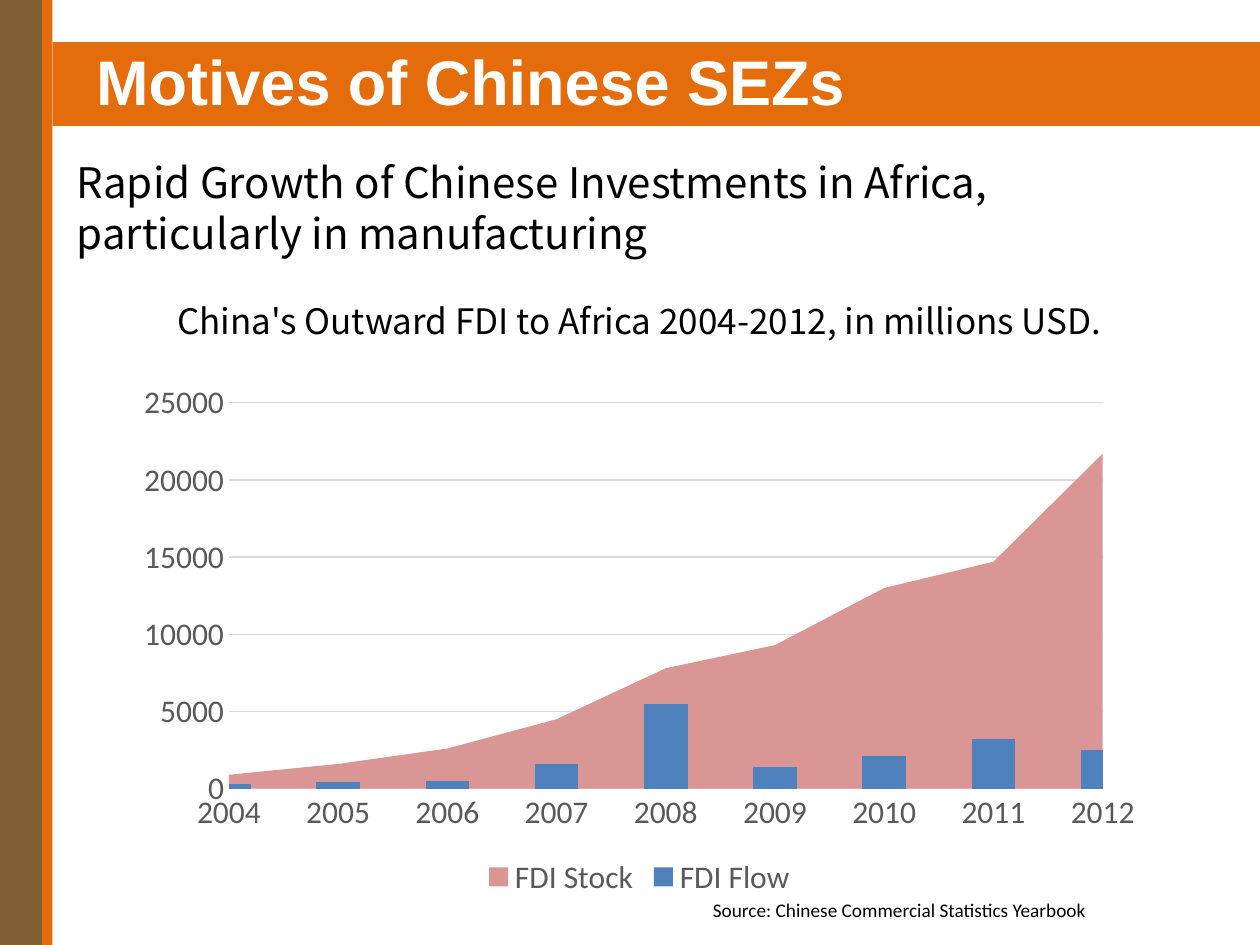
"""Build a slide on the growth of Chinese investment in Africa."""
from lxml import etree
from pptx import Presentation
from pptx.chart.data import CategoryChartData
from pptx.dml.color import RGBColor
from pptx.enum.chart import XL_CHART_TYPE, XL_LEGEND_POSITION, XL_TICK_MARK
from pptx.enum.shapes import MSO_SHAPE
from pptx.oxml.ns import qn
from pptx.util import Cm, Pt

RECTANGLE = MSO_SHAPE.RECTANGLE
CLUSTERED = XL_CHART_TYPE.COLUMN_CLUSTERED
BOTTOM = XL_LEGEND_POSITION.BOTTOM
NO_TICK = XL_TICK_MARK.NONE

WHITE = RGBColor(0xFF, 0xFF, 0xFF)
BLACK = RGBColor(0x00, 0x00, 0x00)
ORANGE = RGBColor(0xE4, 0x6C, 0x0A)
BROWN = RGBColor(0x80, 0x5F, 0x32)
GRAY = RGBColor(0x59, 0x59, 0x59)
LIGHT_GRAY = RGBColor(0xD9, 0xD9, 0xD9)
PINK = RGBColor(0xD9, 0x96, 0x94)
BLUE = RGBColor(0x4F, 0x81, 0xBD)

CJK_FONT = "Noto Sans CJK SC"
BANDS = [
    ((1.06, 0.85, 24.34, 1.69), ORANGE),
    ((0, 0, 0.85, 19.05), BROWN),
    ((0.85, 0, 0.21, 19.05), ORANGE),
]
TITLE = (
    "Motives of Chinese SEZs", (1.69, 0.74, 17.36, 1.8), None,
    {"name": "Arial", "size": Pt(36), "bold": True, "color": WHITE},
)
TEXTS = [
    ("Rapid Growth of Chinese Investments in Africa, particularly in manufacturing",
     (1.3, 3.02, 22.8, 2.31), Pt(29), {"name": CJK_FONT, "size": Pt(24), "color": BLACK}),
    ("China's Outward FDI to Africa 2004-2012, in millions USD.",
     (3.32, 5.92, 20.58, 1.12), Pt(24), {"name": CJK_FONT, "size": Pt(20), "color": BLACK}),
    ("Source: Chinese Commercial Statistics Yearbook",
     (14.12, 17.98, 8.94, 1.07), None, {"name": "Calibri", "size": Pt(11), "color": BLACK}),
]
CHART_BOX = (2.49, 7.52, 20.8, 10.67)
CHART_FONT = {"name": "Calibri", "size": Pt(18), "color": GRAY}
YEARS = [str(year) for year in range(2004, 2013)]
SERIES = [
    ("FDI Stock", (900, 1600, 2600, 4500, 7800, 9300, 13000, 14700, 21700), PINK),
    ("FDI Flow", (300, 400, 500, 1600, 5500, 1400, 2100, 3200, 2500), BLUE),
]


def lengths(box):
    return [Cm(value) for value in box]


def format_font(font, values):
    for name, value in values.items():
        if name == "color":
            font.color.rgb = value
        else:
            setattr(font, name, value)


def add_band(shapes, box, color):
    band = shapes.add_shape(RECTANGLE, *lengths(box))
    band.shadow.inherit = False
    band.fill.solid()
    band.fill.fore_color.rgb = color
    band.line.fill.background()


def add_text(shapes, text, box, line_spacing, font_values):
    frame = shapes.add_textbox(*lengths(box)).text_frame
    frame.word_wrap = True
    paragraph = frame.paragraphs[0]
    paragraph.line_spacing = line_spacing
    run = paragraph.add_run()
    run.text = text
    format_font(run.font, font_values)


def move_to_area(chart, series):
    """Move one column series to an area plot behind the columns."""
    bar_plot = chart.plots[0]._element
    area_plot = etree.Element(qn("c:areaChart"))
    etree.SubElement(area_plot, qn("c:grouping")).set("val", "stacked")
    etree.SubElement(area_plot, qn("c:varyColors")).set("val", "0")
    element = series._element
    for flag in element.findall(qn("c:invertIfNegative")):
        element.remove(flag)
    area_plot.append(element)
    for axis in bar_plot.findall(qn("c:axId")):
        etree.SubElement(area_plot, qn("c:axId")).set("val", axis.get("val"))
    bar_plot.addprevious(area_plot)


def add_investment_chart(shapes):
    data = CategoryChartData()
    data.categories = YEARS
    for name, values, _ in SERIES:
        data.add_series(name, values)
    chart = shapes.add_chart(CLUSTERED, *lengths(CHART_BOX), data).chart
    chart.has_title = False
    format_font(chart.font, CHART_FONT)
    chart.has_legend = True
    chart.legend.position = BOTTOM
    chart.legend.include_in_layout = False
    format_font(chart.legend.font, CHART_FONT)
    for axis in (chart.category_axis, chart.value_axis):
        axis.major_tick_mark = axis.minor_tick_mark = NO_TICK
        format_font(axis.tick_labels.font, CHART_FONT)
    chart.value_axis.format.line.fill.background()
    chart.value_axis.maximum_scale = 25000
    chart.value_axis.major_unit = 5000
    for line in (chart.category_axis.format.line, chart.value_axis.major_gridlines.format.line):
        line.color.rgb = LIGHT_GRAY
        line.width = Pt(0.75)
    plot = chart.plots[0]
    plot.vary_by_categories = False
    plot.gap_width = 150
    all_series = list(plot.series)
    for series, (_, _, color) in zip(all_series, SERIES):
        series.format.fill.solid()
        series.format.fill.fore_color.rgb = color
    move_to_area(chart, all_series[0])


def main():
    presentation = Presentation()
    presentation.slide_width, presentation.slide_height = Cm(25.4), Cm(19.05)
    slide = presentation.slides.add_slide(presentation.slide_layouts[6])
    header = slide.shapes.add_group_shape()
    for box, color in BANDS:
        add_band(header.shapes, box, color)
    add_text(header.shapes, *TITLE)
    add_investment_chart(slide.shapes)
    for text in TEXTS:
        add_text(slide.shapes, *text)
    presentation.save("out.pptx")


if __name__ == "__main__":
    main()
